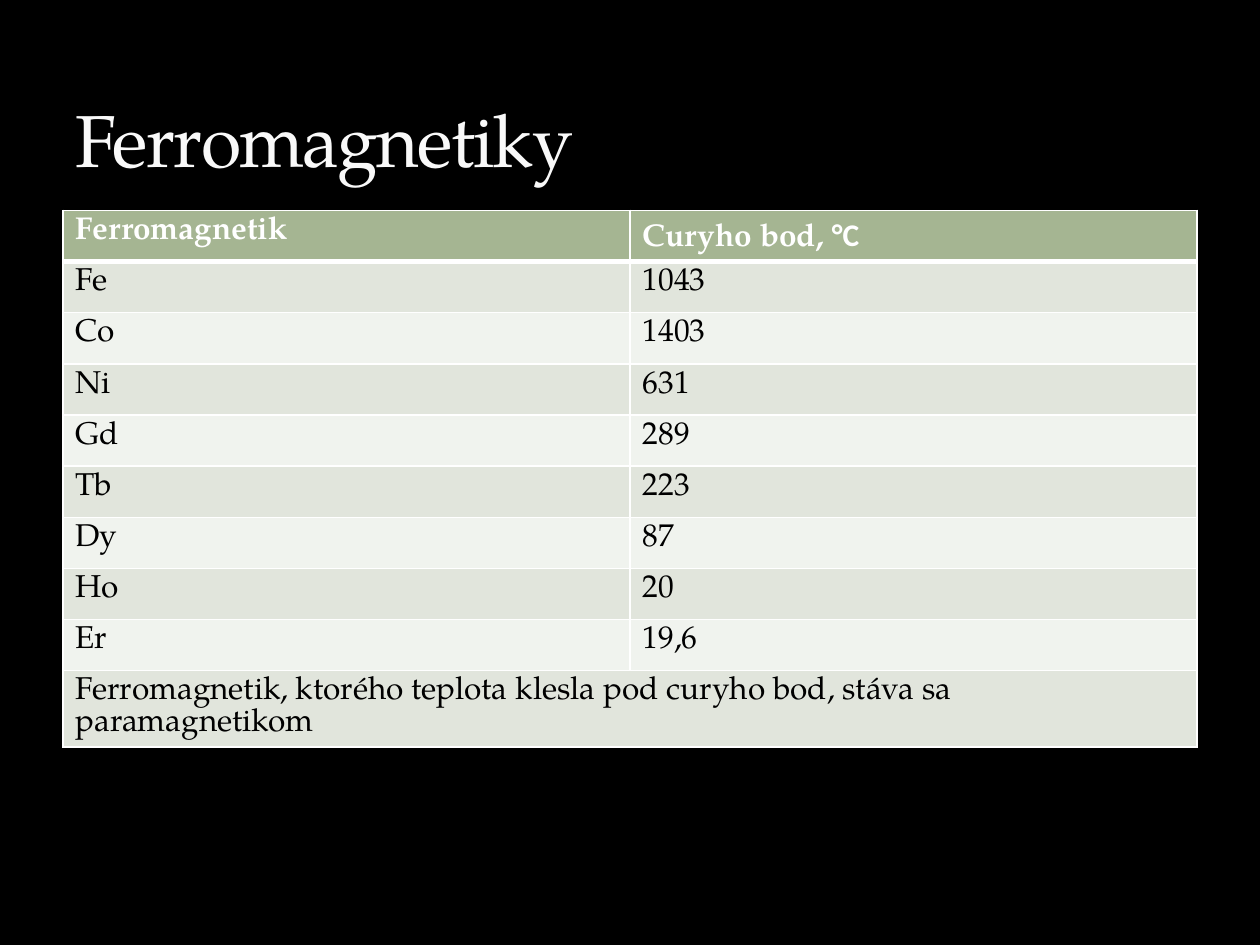
from dataclasses import dataclass

from lxml import etree
from pptx import Presentation
from pptx.dml.color import RGBColor
from pptx.enum.text import MSO_ANCHOR, PP_ALIGN
from pptx.oxml.ns import qn
from pptx.util import Inches, Pt

BOTTOM = MSO_ANCHOR.BOTTOM
LEFT = PP_ALIGN.LEFT


@dataclass(frozen=True)
class Theme:
    """Colours, fonts and type sizes of the slide."""
    back: str = "000000"
    title: str = "F9F9F9"
    head: str = "A5B592"
    bands: tuple = ("E1E5DC", "F0F3EE")
    line: str = "FFFFFF"
    light: str = "FFFFFF"
    dark: str = "000000"
    face: str = "TeX Gyre Pagella"
    unit_face: str = "Calibri"
    title_size: int = 42
    body_size: int = 18


THEME = Theme()
HEADS = ("Ferromagnetik", "Curyho bod, ")
UNIT = "°C"
POINTS = (("Fe", "1043"), ("Co", "1403"), ("Ni", "631"), ("Gd", "289"),
          ("Tb", "223"), ("Dy", "87"), ("Ho", "20"), ("Er", "19,6"))
NOTE = "Ferromagnetik, ktorého teplota klesla pod curyho bod, stáva sa paramagnetikom"


def style(font, size, tint, bold=False):
    """Format a font in the theme face."""
    font.name = THEME.face
    font.size = Pt(size)
    font.bold = bold
    font.color.rgb = RGBColor.from_string(tint)


def edge(cell, base):
    """Draw the four borders of a cell, the lower one base points wide."""
    props = cell._tc.get_or_add_tcPr()
    sides = (("a:lnL", 1), ("a:lnR", 1), ("a:lnT", 1), ("a:lnB", base))
    for place, (tag, width) in enumerate(sides):
        line = etree.Element(qn(tag), w=str(Pt(width)))
        fill = etree.SubElement(line, qn("a:solidFill"))
        etree.SubElement(fill, qn("a:srgbClr"), val=THEME.line)
        props.insert(place, line)


def add_title(slide, text, box):
    """Place and format the title."""
    title = slide.shapes.title
    title.left, title.top, title.width, title.height = box
    frame = title.text_frame
    frame.text = text
    frame.word_wrap = True
    frame.vertical_anchor = BOTTOM
    para = frame.paragraphs[0]
    para.alignment = LEFT
    style(para.font, THEME.title_size, THEME.title)
    para.runs[0]._r.get_or_add_rPr().set("spc", "-100")


def add_points(slide, box):
    """Place the table of Curie points with its closing note."""
    rows = (HEADS, *POINTS, (NOTE, ""))
    left, top, width, height = box
    grid = slide.shapes.add_table(len(rows), len(HEADS), left, top, width, height).table
    for r, row in enumerate(rows):
        top_row = r == 0
        fill = THEME.head if top_row else THEME.bands[(r - 1) % 2]
        for c, text in enumerate(row):
            cell = grid.cell(r, c)
            cell.text = text
            cell.fill.solid()
            cell.fill.fore_color.rgb = RGBColor.from_string(fill)
            style(cell.text_frame.paragraphs[0].font, THEME.body_size,
                  THEME.light if top_row else THEME.dark, top_row)
            edge(cell, 3 if top_row else 1)
    unit = grid.cell(0, 1).text_frame.paragraphs[0].add_run()
    unit.text = UNIT
    unit.font.name = THEME.unit_face
    last = len(rows) - 1
    grid.cell(last, 0).merge(grid.cell(last, 1))


def main():
    """Build and save the slide."""
    deck = Presentation()
    deck.slide_width, deck.slide_height = Inches(10), Inches(7.5)
    slide = deck.slides.add_slide(deck.slide_layouts[5])
    slide.background.fill.solid()
    slide.background.fill.fore_color.rgb = RGBColor.from_string(THEME.back)
    add_points(slide, (Inches(0.5), Inches(1.67), Inches(9), Inches(4.06)))
    add_title(slide, "Ferromagnetiky",
              (Inches(0.5), Inches(0.17), Inches(9), Inches(1.33)))
    deck.save("out.pptx")


if __name__ == "__main__":
    main()
